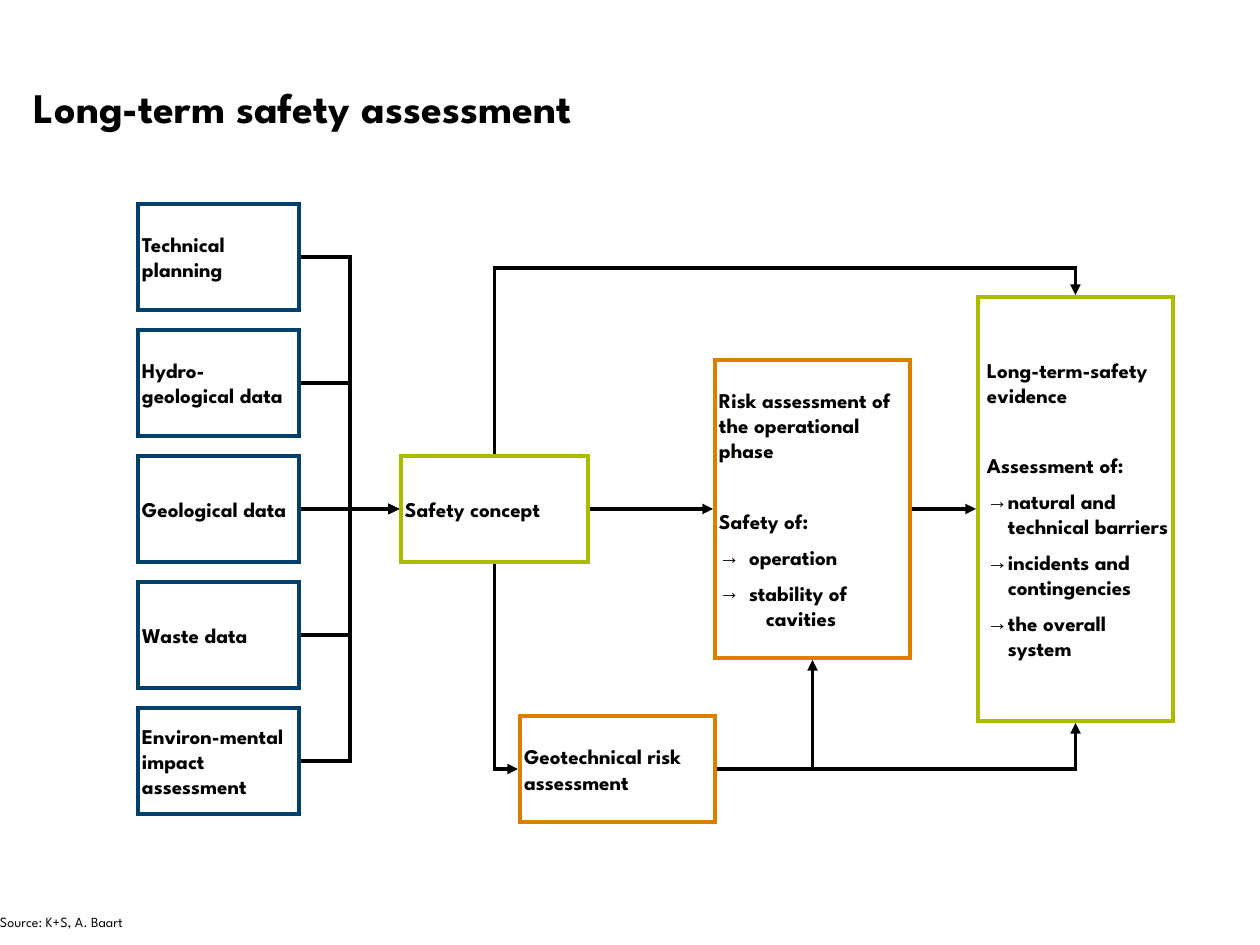
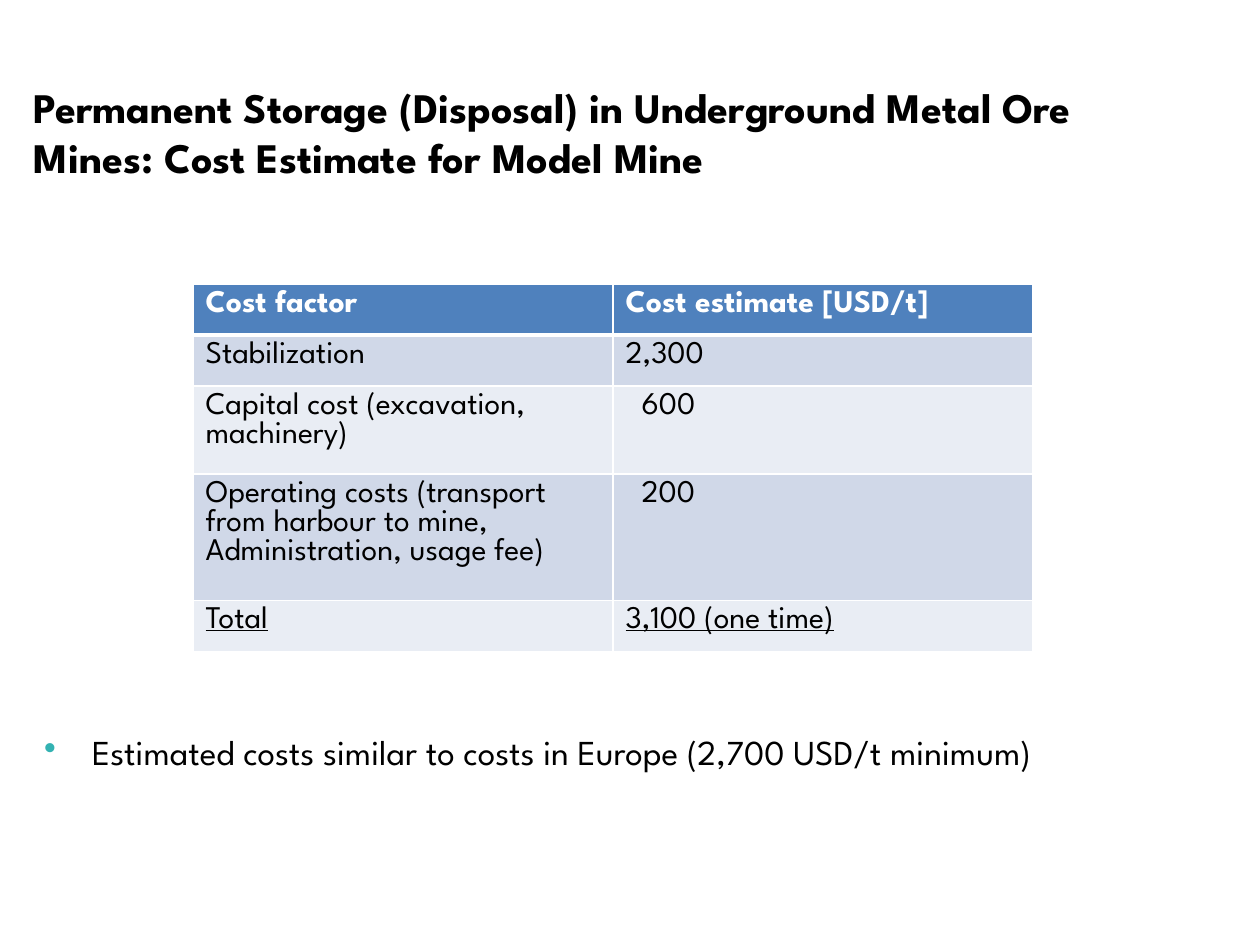
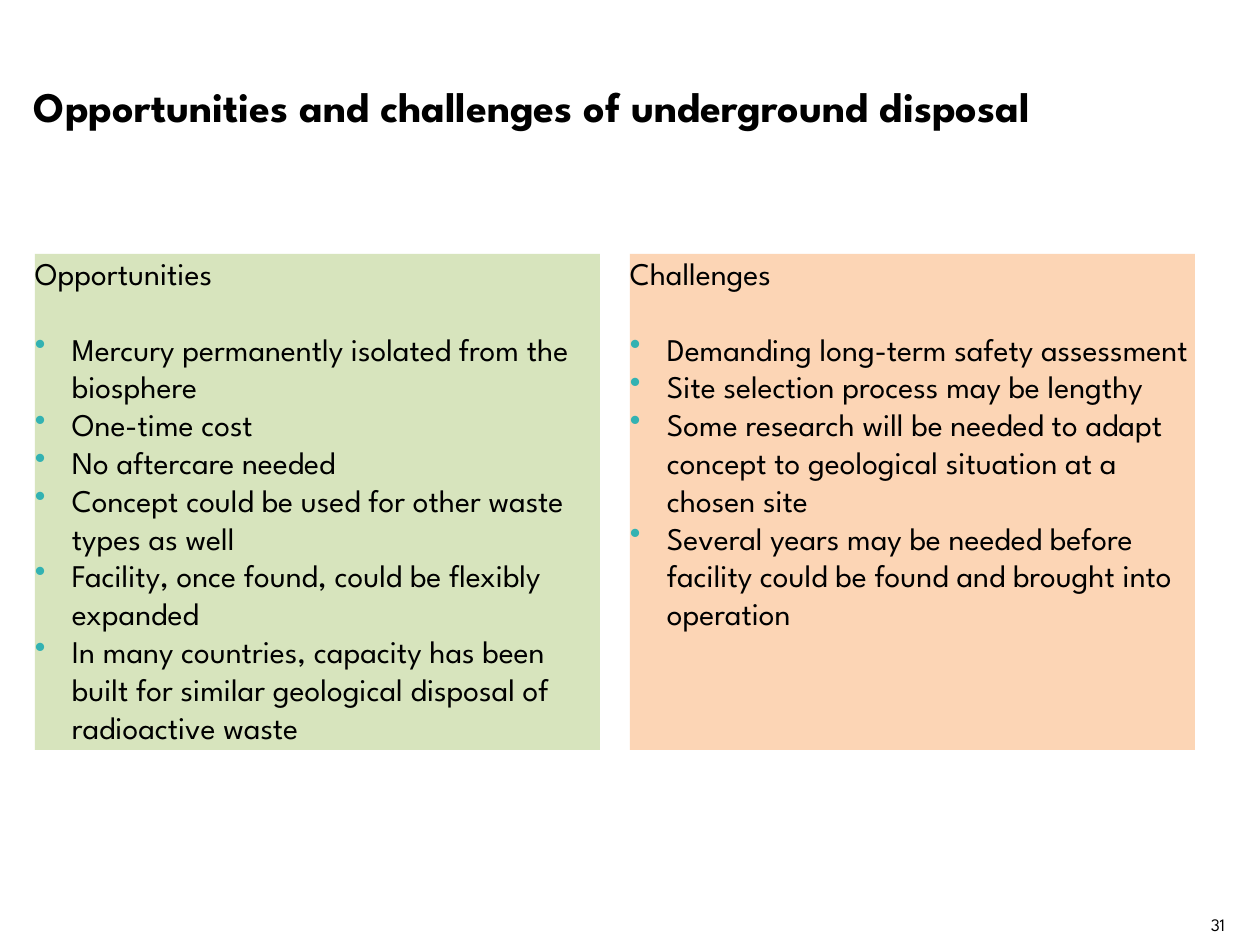
from dataclasses import dataclass

from lxml.etree import SubElement
from pptx import Presentation
from pptx.dml.color import RGBColor
from pptx.enum.shapes import MSO_CONNECTOR, MSO_SHAPE
from pptx.enum.text import MSO_ANCHOR, PP_ALIGN
from pptx.oxml.ns import qn
from pptx.util import Emu, Pt


@dataclass(frozen=True)
class Theme:
    font: str = "League Spartan"
    arrow_font: str = "Arial"
    ink: str = "000000"
    white: str = "FFFFFF"
    input: str = "00406A"
    safety: str = "AABB00"
    risk: str = "DC7F00"
    bullet: str = "33B2B2"
    header: str = "4F81BD"
    bands: tuple = ("D0D8E8", "E9EDF4")
    opportunity: str = "D7E4BD"
    challenge: str = "FCD5B5"
    title_size: int = 24
    body_size: int = 20
    list_size: int = 18
    box_size: int = 12
    number_size: int = 10
    source_size: int = 8
    stroke: int = 2
    header_rule: int = 3


@dataclass(frozen=True)
class Line:
    text: str
    before: float = 0
    indent: int = 0
    hanging: int = 0
    bullet: str = ""
    bullet_color: str = ""
    bullet_font: str = ""


THEME = Theme()
SCALE = 914400 / 126
SLIDE_SIZE = (1260, 945)
BLANK = 6
TITLE_LEFT, TITLE_TOP, TITLE_WIDTH = 34, 81, 1056
GAP = 2


def arrow_item(text, indent):
    return Line(text, 6, indent, indent, "→", bullet_font=THEME.arrow_font)


def dot_item(text, indent, before=0):
    return Line(text, before, indent, indent, "•", THEME.bullet)


ASSESSMENT_TITLE = "Long-term safety assessment"
SOURCE = "Source: K+S, A. Baart"
INPUTS = [
    "Technical planning",
    "Hydro-geological data",
    "Geological data",
    "Waste data",
    "Environ-mental impact assessment",
]
INPUT_LEFT, INPUT_TOP, INPUT_PITCH = 138, 204, 126
INPUT_WIDTH, STEP_HEIGHT = 161, 106
STEPS = {
    "concept": ((401, 456, 187, STEP_HEIGHT), THEME.safety, 4, [Line("Safety concept")]),
    "operation": ((715, 360, 195, 298), THEME.risk, 4, [
        Line("Risk assessment of the operational phase"),
        Line("Safety of:", 26),
        arrow_item("operation", 30),
        arrow_item("stability of", 30),
        Line("cavities", indent=47),
    ]),
    "geotechnical": ((520, 716, 195, STEP_HEIGHT), THEME.risk, 4,
                     [Line("Geotechnical risk assessment")]),
    "evidence": ((978, 297, 195, 424), THEME.safety, 9, [
        Line("Long-term-safety"),
        Line("evidence"),
        Line("Assessment of:", 26),
        arrow_item("natural and technical barriers", 21),
        arrow_item("incidents and contingencies", 21),
        arrow_item("the overall system", 21),
    ]),
}
LINKS = [
    ("concept", "bottom", "geotechnical", "left", "bentConnector2", None),
    ("concept", "right", "operation", "left", "line", None),
    ("concept", "top", "evidence", "top", "bentConnector3", 1.17),
    ("operation", "right", "evidence", "left", "line", None),
    ("geotechnical", "right", "operation", "bottom", "bentConnector2", None),
    ("geotechnical", "right", "evidence", "bottom", "bentConnector2", None),
]

COST_TITLE = ("Permanent Storage (Disposal) in Underground Metal Ore Mines: "
              "Cost Estimate for Model Mine")
COSTS = [
    ("Cost factor", "Cost estimate [USD/t]"),
    ("Stabilization", "2,300"),
    ("Capital cost (excavation, machinery)", "600"),
    ("Operating costs (transport from harbour to mine, Administration, usage fee)", "200"),
    ("Total", "3,100 (one time)"),
]
COST_ROW_HEIGHTS = [51, 51, 71, 100, 51]
COST_LEFT, COST_TOP, COST_WIDTH = 193, 284, 840
HUNDREDS_INDENT = 16
COST_REMARK = dot_item("Estimated costs similar to costs in Europe (2,700 USD/t minimum)", 48)

BALANCE_TITLE = "Opportunities and challenges of underground disposal"
PAGE_NUMBER = "31"
BALANCE = [
    ("Opportunities", THEME.opportunity, [
        "Mercury permanently isolated from the biosphere",
        "One-time cost",
        "No aftercare needed",
        "Concept could be used for other waste types as well",
        "Facility, once found, could be flexibly expanded",
        "In many countries, capacity has been built for similar geological disposal "
        "of radioactive waste",
    ]),
    ("Challenges", THEME.challenge, [
        "Demanding long-term safety assessment",
        "Site selection process may be lengthy",
        "Some research will be needed to adapt concept to geological situation at a chosen site",
        "Several years may be needed before facility could be found and brought into operation",
    ]),
]
PANEL_LEFT, PANEL_TOP, PANEL_PITCH, PANEL_WIDTH, PANEL_HEIGHT = 35, 254, 595, 565, 496


def px(length):
    return Emu(round(length * SCALE))


def rgb(color):
    return RGBColor.from_string(color)


def write(frame, lines, size, color=THEME.ink, bold=False, underline=False,
          align=PP_ALIGN.LEFT):
    frame.word_wrap = True
    for index, line in enumerate(lines):
        paragraph = frame.add_paragraph() if index else frame.paragraphs[0]
        paragraph.text = line.text
        properties = paragraph._p.get_or_add_pPr()
        properties.set("marL", str(px(line.indent)))
        properties.set("indent", str(px(-line.hanging)))
        if line.bullet_color:
            color_part = SubElement(properties, qn("a:buClr"))
            SubElement(color_part, qn("a:srgbClr"), val=line.bullet_color)
        if line.bullet_font:
            SubElement(properties, qn("a:buFont"), typeface=line.bullet_font)
        if line.bullet:
            SubElement(properties, qn("a:buChar"), char=line.bullet)
        paragraph.alignment = align
        if line.before:
            paragraph.space_before = Pt(line.before)
        for run in paragraph.runs:
            run.font.name = THEME.font
            run.font.size = Pt(size)
            run.font.bold = bold
            run.font.underline = underline
            run.font.color.rgb = rgb(color)


def set_insets(frame, left=0, other=0):
    frame.margin_left = px(left)
    frame.margin_top = frame.margin_right = frame.margin_bottom = px(other)


def add_text(slide, area, lines, size, **style):
    frame = slide.shapes.add_textbox(*map(px, area)).text_frame
    set_insets(frame)
    write(frame, lines, size, **style)


def add_slide(deck, title, title_height):
    slide = deck.slides.add_slide(deck.slide_layouts[BLANK])
    add_text(slide, (TITLE_LEFT, TITLE_TOP, TITLE_WIDTH, title_height),
             [Line(title)], THEME.title_size, bold=True)
    return slide


def add_rectangle(slide, area):
    rectangle = slide.shapes.add_shape(MSO_SHAPE.RECTANGLE, *map(px, area))
    rectangle.shadow.inherit = False
    return rectangle


def add_step(slide, area, color, left_inset, lines):
    step = add_rectangle(slide, area)
    step.fill.background()
    step.line.color.rgb = rgb(color)
    step.line.width = Pt(THEME.stroke)
    SubElement(step._element.spPr.find(qn("a:ln")), qn("a:miter"), lim="800000")
    step.text_frame.vertical_anchor = MSO_ANCHOR.MIDDLE
    set_insets(step.text_frame, left_inset, 4)
    write(step.text_frame, lines, THEME.box_size, bold=True)


def port(area, side):
    left, top, width, height = area
    return {
        "left": (left - GAP, top + height / 2),
        "right": (left + width + GAP, top + height / 2),
        "top": (left + width / 2, top - GAP),
        "bottom": (left + width / 2, top + height + GAP),
    }[side]


def add_link(slide, start, end, shape="line", bend=None, upright=False):
    kind = MSO_CONNECTOR.STRAIGHT if shape == "line" else MSO_CONNECTOR.ELBOW
    link = slide.shapes.add_connector(kind, *map(px, start + end))
    link.line.color.rgb = rgb(THEME.ink)
    link.line.width = Pt(THEME.stroke)
    properties = link._element.spPr
    stroke = properties.find(qn("a:ln"))
    SubElement(stroke, qn("a:miter"), lim="800000")
    SubElement(stroke, qn("a:tailEnd"), type="triangle")
    SubElement(properties, qn("a:effectLst"))
    geometry = properties.find(qn("a:prstGeom"))
    geometry.set("prst", shape)
    if bend is not None:
        SubElement(geometry.find(qn("a:avLst")), qn("a:gd"),
                   name="adj1", fmla=f"val {round(bend * 100000)}")
    if upright:
        across, down = end[0] - start[0], end[1] - start[1]
        link.left = px((start[0] + end[0] - abs(down)) / 2)
        link.top = px((start[1] + end[1] - across) / 2)
        link.width, link.height = px(abs(down)), px(across)
        transform = properties.find(qn("a:xfrm"))
        transform.set("rot", str(270 * 60000))
        transform.set("flipH", "1" if down > 0 else "0")
        transform.set("flipV", "0")


def add_header_rule(cell):
    properties = cell._tc.get_or_add_tcPr()
    rule = properties.makeelement(qn("a:lnB"), {"w": str(Pt(THEME.header_rule))})
    properties.insert(0, rule)
    SubElement(SubElement(rule, qn("a:solidFill")), qn("a:srgbClr"), val=THEME.white)


def build_assessment(deck):
    slide = add_slide(deck, ASSESSMENT_TITLE, 83)
    concept_entry = port(STEPS["concept"][0], "left")
    for index, name in enumerate(INPUTS):
        area = (INPUT_LEFT, INPUT_TOP + index * INPUT_PITCH, INPUT_WIDTH, STEP_HEIGHT)
        add_step(slide, area, THEME.input, 4, [Line(name)])
        start = port(area, "right")
        add_link(slide, start, concept_entry,
                 "line" if start[1] == concept_entry[1] else "bentConnector3")
    for step in STEPS.values():
        add_step(slide, *step)
    for origin, exit_side, target, entry_side, shape, bend in LINKS:
        add_link(slide, port(STEPS[origin][0], exit_side), port(STEPS[target][0], entry_side),
                 shape, bend, exit_side in ("top", "bottom"))
    add_text(slide, (0, 914, 667, 31), [Line(SOURCE)], THEME.source_size)


def build_costs(deck):
    slide = add_slide(deck, COST_TITLE, 135)
    add_text(slide, (44, 731, 1192, 214), [COST_REMARK], THEME.body_size)
    table = slide.shapes.add_table(
        len(COSTS), len(COSTS[0]),
        *map(px, (COST_LEFT, COST_TOP, COST_WIDTH, sum(COST_ROW_HEIGHTS)))).table
    for row, (entries, height) in enumerate(zip(COSTS, COST_ROW_HEIGHTS)):
        table.rows[row].height = px(height)
        is_header = row == 0
        for column, entry in enumerate(entries):
            cell = table.cell(row, column)
            cell.fill.solid()
            cell.fill.fore_color.rgb = rgb(
                THEME.header if is_header else THEME.bands[(row - 1) % 2])
            if is_header:
                add_header_rule(cell)
            indent = HUNDREDS_INDENT if len(entry) == 3 else 0
            write(cell.text_frame, [Line(entry, indent=indent)], THEME.list_size,
                  color=THEME.white if is_header else THEME.ink, bold=is_header,
                  underline=row == len(COSTS) - 1)


def build_balance(deck):
    slide = add_slide(deck, BALANCE_TITLE, 115)
    add_text(slide, (1138, 914, 87, 25), [Line(PAGE_NUMBER)], THEME.number_size,
             align=PP_ALIGN.RIGHT)
    for index, (heading, color, points) in enumerate(BALANCE):
        panel = add_rectangle(slide, (PANEL_LEFT + index * PANEL_PITCH, PANEL_TOP,
                                      PANEL_WIDTH, PANEL_HEIGHT))
        panel.fill.solid()
        panel.fill.fore_color.rgb = rgb(color)
        panel.line.fill.background()
        panel.text_frame.vertical_anchor = MSO_ANCHOR.TOP
        set_insets(panel.text_frame)
        items = [dot_item(point, 37, 0 if order else 21.6)
                 for order, point in enumerate(points)]
        write(panel.text_frame, [Line(heading), *items], THEME.list_size)


def main():
    deck = Presentation()
    deck.slide_width, deck.slide_height = map(px, SLIDE_SIZE)
    build_assessment(deck)
    build_costs(deck)
    build_balance(deck)
    deck.save("out.pptx")


if __name__ == "__main__":
    main()
